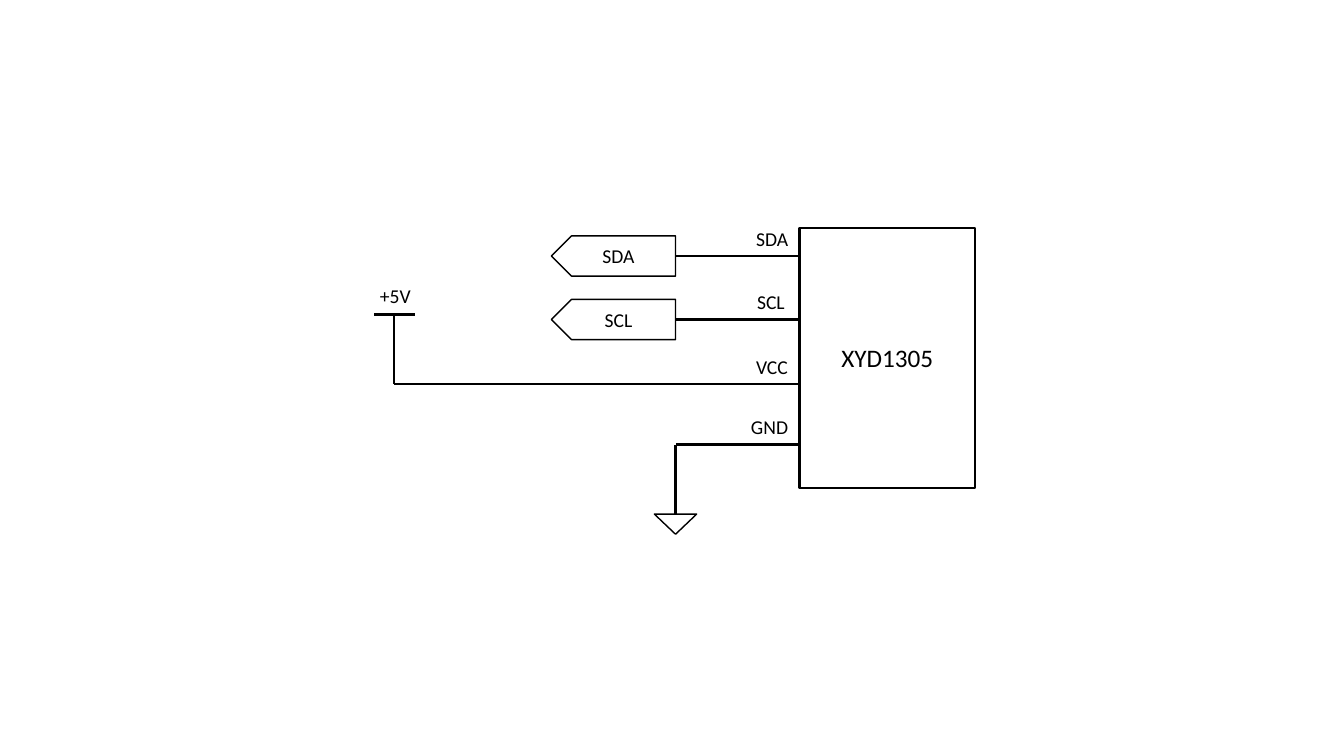
import pptx
import pptx.dml.color
import pptx.enum.shapes
import pptx.enum.text
import pptx.oxml.ns
import pptx.util
from lxml import etree

Inches = pptx.util.Inches
Shapes = pptx.enum.shapes.MSO_SHAPE
Align = pptx.enum.text.PP_ALIGN
BLACK = pptx.dml.color.RGBColor(0, 0, 0)
FONT = "Calibri"
LABEL_HEIGHT = 0.34
TAG_SIZE = (1.23, 0.4)
PINS = [
    ("SDA", 2.54, 6.7, 7.4, 0.52),
    ("SCL", 3.17, 6.7, 7.41, 0.48),
    ("VCC", 3.81, 3.91, 7.4, 0.52),
    ("GND", 4.41, 6.7, 7.35, 0.57),
]


def write(frame, text, size, align):
    """Put one run of black text into a frame."""
    paragraph = frame.paragraphs[0]
    paragraph.alignment = align
    run = paragraph.add_run()
    run.text = text
    run.font.name = FONT
    run.font.size = pptx.util.Pt(size)
    run.font.color.rgb = BLACK


def wire(slide, start, end):
    """Draw a straight wire between two points."""
    line = slide.shapes.add_connector(
        pptx.enum.shapes.MSO_CONNECTOR.STRAIGHT, *map(Inches, start + end))
    line.line.color.rgb = BLACK
    line.line.width = pptx.util.Pt(1.5)
    etree.SubElement(line._element.spPr, pptx.oxml.ns.qn("a:effectLst"))


def symbol(slide, kind, box, weight, text="", size=14):
    """Draw an outlined circuit symbol, with a centred name if given."""
    outline = slide.shapes.add_shape(kind, *map(Inches, box))
    outline.shadow.inherit = False
    outline.fill.background()
    outline.line.color.rgb = BLACK
    outline.line.width = pptx.util.Pt(weight)
    if text:
        outline.text_frame.vertical_anchor = pptx.enum.text.MSO_ANCHOR.MIDDLE
        write(outline.text_frame, text, size, Align.CENTER)
    return outline


def label(slide, text, left, top, width):
    """Place a small one-line label."""
    frame = slide.shapes.add_textbox(
        *map(Inches, (left, top, width, LABEL_HEIGHT))).text_frame
    frame.word_wrap = False
    frame.auto_size = pptx.enum.text.MSO_AUTO_SIZE.SHAPE_TO_FIT_TEXT
    write(frame, text, 14, Align.LEFT)


def chip(slide, left, top, width, height):
    """Draw the display controller with its pin wires and pin names."""
    symbol(slide, Shapes.RECTANGLE, (left, top, width, height), 1.5,
           "XYD1305", 18)
    for name, pin_y, wire_end, label_left, label_width in PINS:
        wire(slide, (left, pin_y), (wire_end, pin_y))
        label(slide, name, label_left, pin_y - LABEL_HEIGHT, label_width)


def signal_tag(slide, name, right, middle):
    """Draw a left-pointing signal tag ending at a wire."""
    width, height = TAG_SIZE
    tag = symbol(slide, Shapes.PENTAGON,
                 (right - width, middle - height / 2, width, height), 1, name)
    tag._element.spPr.xfrm.set("flipH", "1")


def supply(slide, x, top, bottom):
    """Draw the supply bar, its voltage and the wire down from it."""
    wire(slide, (x, top), (x, bottom))
    wire(slide, (x - 0.2, top), (x + 0.21, top))
    label(slide, "+5V", x - 0.24, top - 0.35, 0.51)


def ground(slide, x, top, bottom):
    """Draw the wire down to the ground triangle."""
    wire(slide, (x, top), (x, bottom))
    triangle = symbol(slide, Shapes.ISOSCELES_TRIANGLE,
                      (x - 0.21, bottom, 0.42, 0.2), 1)
    triangle.rotation = 180


def main():
    """Build the wiring diagram and save it."""
    deck = pptx.Presentation()
    deck.slide_width, deck.slide_height = Inches(13.33), Inches(7.5)
    slide = deck.slides.add_slide(deck.slide_layouts[6])
    chip(slide, 7.93, 2.26, 1.74, 2.58)
    for name, pin_y, wire_end, *_ in PINS[:2]:
        signal_tag(slide, name, wire_end, pin_y)
    supply(slide, 3.91, 3.12, 3.81)
    ground(slide, 6.7, 4.41, 5.1)
    deck.save("out.pptx")


if __name__ == "__main__":
    main()
